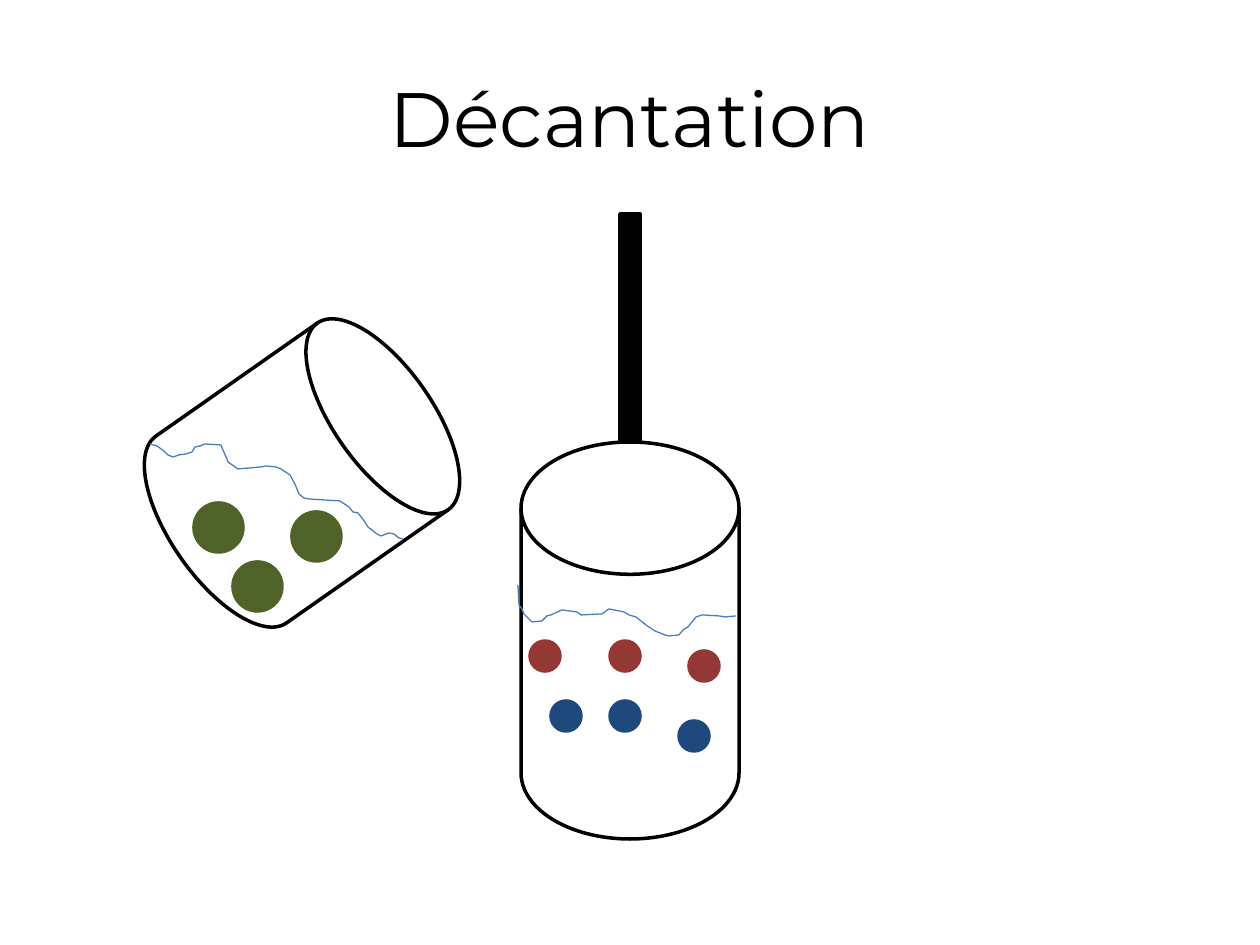
from pptx import Presentation
from pptx.dml.color import RGBColor
from pptx.enum.shapes import MSO_SHAPE as Preset
from pptx.enum.text import MSO_ANCHOR as Anchor, PP_ALIGN as Align
from pptx.util import Inches, Pt

SCALE = Inches(1) / 126
BLACK = RGBColor(0x00, 0x00, 0x00)
WHITE = RGBColor(0xFF, 0xFF, 0xFF)
GREEN = RGBColor(0x4F, 0x62, 0x28)
RED = RGBColor(0x95, 0x37, 0x35)
NAVY = RGBColor(0x1F, 0x49, 0x7D)
WATER = RGBColor(0x4B, 0x7E, 0xBC)


def px(*lengths):
    return [round(length * SCALE) for length in lengths]


def add_preset(preset, box, fill, line):
    shape = slide.shapes.add_shape(preset, *px(*box))
    shape.shadow.inherit = False
    shape.fill.solid()
    shape.fill.fore_color.rgb = fill
    shape.line.color.rgb = line
    shape.line.width = Pt(2)
    return shape


presentation = Presentation()
presentation.slide_width, presentation.slide_height = px(1260, 945)
slide = presentation.slides.add_slide(presentation.slide_layouts[5])

title = slide.shapes.title
title.left, title.top, title.width, title.height = px(63, 38, 1134, 158)
title.text_frame.text = "Décantation"
title.text_frame.vertical_anchor = Anchor.MIDDLE
paragraph = title.text_frame.paragraphs[0]
paragraph.alignment = Align.CENTER
paragraph.font.name = "Montserrat"
paragraph.font.size = Pt(44)
paragraph.font.color.rgb = BLACK

tilted_surface = [
    (150, 444), (157, 446), (164, 451), (168, 455), (173, 457), (179, 455),
    (186, 454), (192, 452), (195, 447), (200, 446), (205, 444), (221, 445),
    (223, 450), (227, 459), (228, 462), (238, 469), (261, 467), (266, 466),
    (276, 467), (281, 469), (290, 475), (295, 484), (297, 489), (299, 494),
    (304, 498), (309, 499), (340, 501), (349, 507), (353, 512), (358, 513),
    (362, 518), (365, 522), (368, 527), (377, 534), (381, 536), (389, 533),
    (394, 534), (399, 538), (403, 539),
]
upright_surface = [
    (518, 585), (519, 605), (522, 609), (524, 614), (532, 622), (542, 621),
    (547, 616), (551, 615), (562, 610), (577, 612), (581, 615), (602, 614),
    (609, 609), (624, 612), (629, 615), (636, 617), (646, 625), (655, 631),
    (665, 635), (669, 636), (679, 635), (683, 630), (688, 627), (696, 617),
    (702, 615), (719, 616), (725, 617), (736, 616),
]
green_balls = [(GREEN, 49, 194, 503), (GREEN, 49, 292, 512), (GREEN, 49, 233, 562)]
small_balls = [
    (RED, 30, 530, 641), (RED, 30, 610, 641), (RED, 30, 689, 651),
    (NAVY, 30, 551, 701), (NAVY, 30, 610, 701), (NAVY, 30, 679, 721),
]
beakers = [
    ((188, 325, 228, 296), 55, tilted_surface, green_balls),
    ((521, 442, 218, 397), 0, upright_surface, small_balls),
]

for box, rotation, surface, balls in beakers:
    beaker = add_preset(Preset.FLOWCHART_MAGNETIC_DISK, box, WHITE, BLACK)
    beaker.rotation = rotation

    builder = slide.shapes.build_freeform(*surface[0], scale=SCALE)
    builder.add_line_segments(surface[1:], close=False)
    wave = builder.convert_to_shape()
    wave.shadow.inherit = False
    wave.fill.background()
    wave.line.color.rgb = WATER
    wave.line.width = Pt(0.75)

    for color, size, left, top in balls:
        add_preset(Preset.OVAL, (left, top, size, size), color, color)

add_preset(Preset.RECTANGLE, (620, 214, 20, 228), BLACK, BLACK)

presentation.save("out.pptx")
